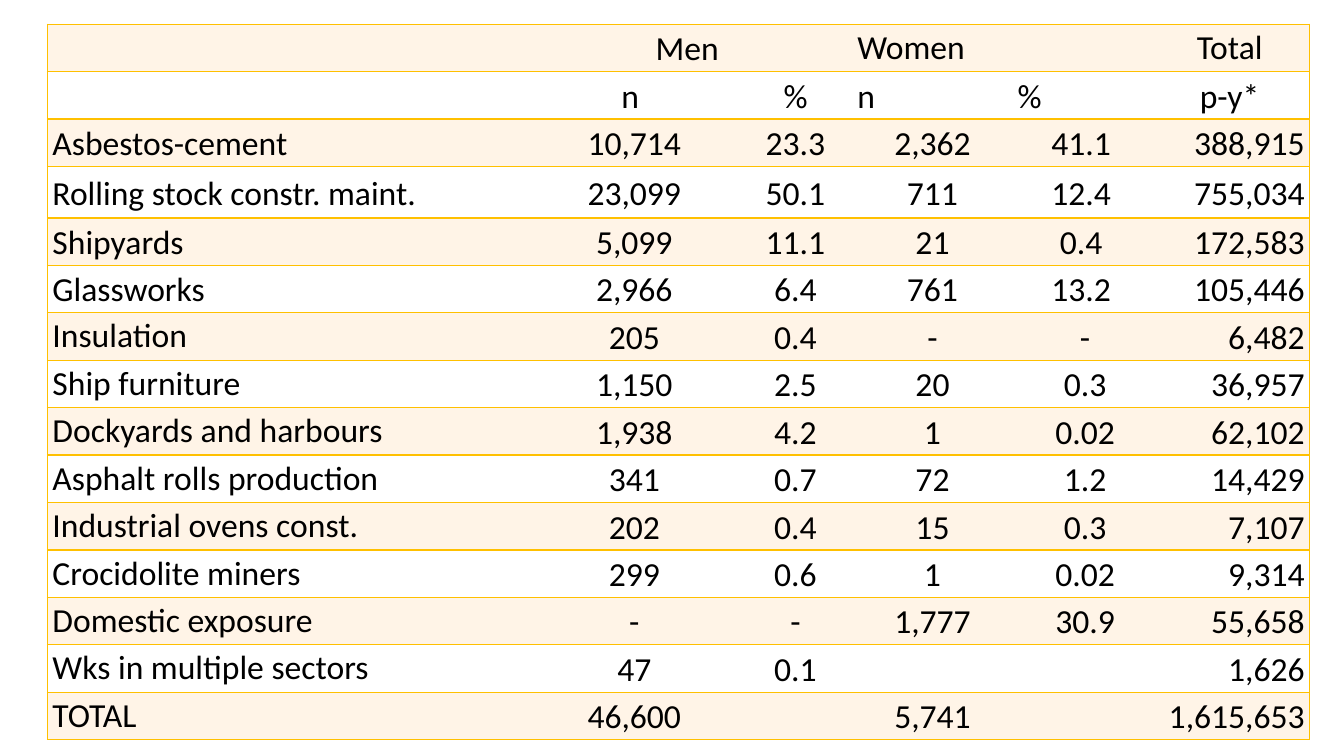
from dataclasses import astuple, dataclass

from lxml import etree
from pptx import Presentation
from pptx.dml.color import RGBColor
from pptx.enum.text import MSO_ANCHOR, PP_ALIGN
from pptx.oxml.ns import qn
from pptx.table import Table, _Cell
from pptx.util import Inches, Pt

LEFT, MID, RIGHT = PP_ALIGN.LEFT, PP_ALIGN.CENTER, PP_ALIGN.RIGHT
CENTER = MSO_ANCHOR.MIDDLE


@dataclass(frozen=True)
class Theme:
    font: str = "Calibri"
    size: int = 24
    ink: str = "000000"
    band: str = "FFF4E7"
    plain: str = "FFFFFF"
    rule: str = "FFC000"
    line: int = 1


@dataclass(frozen=True)
class Row:
    label: str = ""
    men: str = ""
    men_pct: str = ""
    women: str = ""
    women_pct: str = ""
    total: str = ""


@dataclass(frozen=True)
class Box:
    left: float
    top: float
    width: float
    height: float


THEME = Theme()
AREA = Box(0.0353, 0.032, 0.9393, 0.9467)
COLS = (4.71, 2.15, 1.13, 1.59, 1.36, 1.59)
ROWS = (
    Row(men="Men", women="Women", total="Total"),
    Row("", "n", "%", "n", "%", "p-y*"),
    Row("Asbestos-cement", "10,714", "23.3", "2,362", "41.1", "388,915"),
    Row("Rolling stock constr. maint.", "23,099", "50.1", "711", "12.4", "755,034"),
    Row("Shipyards", "5,099", "11.1", "21", "0.4", "172,583"),
    Row("Glassworks", "2,966", "6.4", "761", "13.2", "105,446"),
    Row("Insulation", "205", "0.4", "-", "-", "6,482"),
    Row("Ship furniture", "1,150", "2.5", "20", "0.3", "36,957"),
    Row("Dockyards and harbours", "1,938", "4.2", "1", "0.02", "62,102"),
    Row("Asphalt rolls production", "341", "0.7", "72", "1.2", "14,429"),
    Row("Industrial ovens const.", "202", "0.4", "15", "0.3", "7,107"),
    Row("Crocidolite miners", "299", "0.6", "1", "0.02", "9,314"),
    Row("Domestic exposure", "-", "-", "1,777", "30.9", "55,658"),
    Row("Wks in multiple sectors", "47", "0.1", total="1,626"),
    Row("TOTAL", "46,600", women="5,741", total="1,615,653"),
)
HEADS = 2
TALL_ROW = 3
SPLIT = 6
LAST = len(COLS) - 1
HEIGHTS = tuple(0.51 if r == TALL_ROW else 0.47 for r in range(len(ROWS)))


def write(cell: _Cell, text: str, *, align: PP_ALIGN, loose: bool, indent: float) -> None:
    para = cell.text_frame.paragraphs[0]
    para.alignment = align
    if loose:
        para.line_spacing = 1.07
        para.space_after = Pt(8)
    if indent:
        props = para._p.get_or_add_pPr()
        props.set("marL", str(Inches(indent)))
        props.set("indent", "0")
    run = para.add_run()
    run.text = text
    run.font.name = THEME.font
    run.font.size = Pt(THEME.size)
    run.font.bold = False
    run.font.color.rgb = RGBColor.from_string(THEME.ink)


def edge(cell: _Cell, side: str, shown: bool) -> None:
    props = cell._tc.get_or_add_tcPr()
    line = etree.SubElement(props, qn(f"a:ln{side}"), w=str(Pt(THEME.line)))
    if shown:
        fill = etree.SubElement(line, qn("a:solidFill"))
        etree.SubElement(fill, qn("a:srgbClr"), val=THEME.rule)
    else:
        etree.SubElement(line, qn("a:noFill"))


def paint(cell: _Cell, row: int, col: int) -> None:
    cell.vertical_anchor = CENTER
    cell.margin_left = cell.margin_right = Inches(0.05)
    cell.margin_top = cell.margin_bottom = 0
    for side, shown in (("L", col == 0), ("R", col == LAST), ("T", True), ("B", True)):
        edge(cell, side, shown)
    cell.fill.solid()
    tint = THEME.plain if row % 2 else THEME.band
    cell.fill.fore_color.rgb = RGBColor.from_string(tint)


def align_for(row: int, col: int) -> PP_ALIGN:
    if col == 0 or (row < HEADS and col in (3, 4)):
        return LEFT
    return RIGHT if col == LAST and row >= HEADS else MID


def is_loose(row: int, col: int) -> bool:
    if row == 0:
        return col == 1
    return col > 0 or row < SPLIT


def indent_for(row: int, col: int) -> float:
    inset = (col == 1 and row >= HEADS) or (col == 4 and row >= SPLIT)
    return 0.08 if inset else 0


def fill_grid(grid: Table) -> None:
    for r, row in enumerate(ROWS):
        for c, text in enumerate(astuple(row)):
            cell = grid.cell(r, c)
            paint(cell, r, c)
            if text:
                write(cell, text, align=align_for(r, c), loose=is_loose(r, c),
                      indent=indent_for(r, c))


def main() -> None:
    deck = Presentation()
    deck.slide_width, deck.slide_height = Inches(13.33), Inches(7.5)
    slide = deck.slides.add_slide(deck.slide_layouts[6])
    wide, high = deck.slide_width, deck.slide_height
    width, height = int(AREA.width * wide), int(AREA.height * high)
    grid = slide.shapes.add_table(
        len(ROWS), len(COLS), int(AREA.left * wide), int(AREA.top * high), width, height
    ).table
    grid.first_row = grid.horz_banding = False
    for col, share in zip(grid.columns, COLS):
        col.width = int(width * share / sum(COLS))
    for row, share in zip(grid.rows, HEIGHTS):
        row.height = int(height * share / sum(HEIGHTS))
    for start in (1, 3):
        grid.cell(0, start).merge(grid.cell(0, start + 1))
    fill_grid(grid)
    deck.save("out.pptx")


if __name__ == "__main__":
    main()
